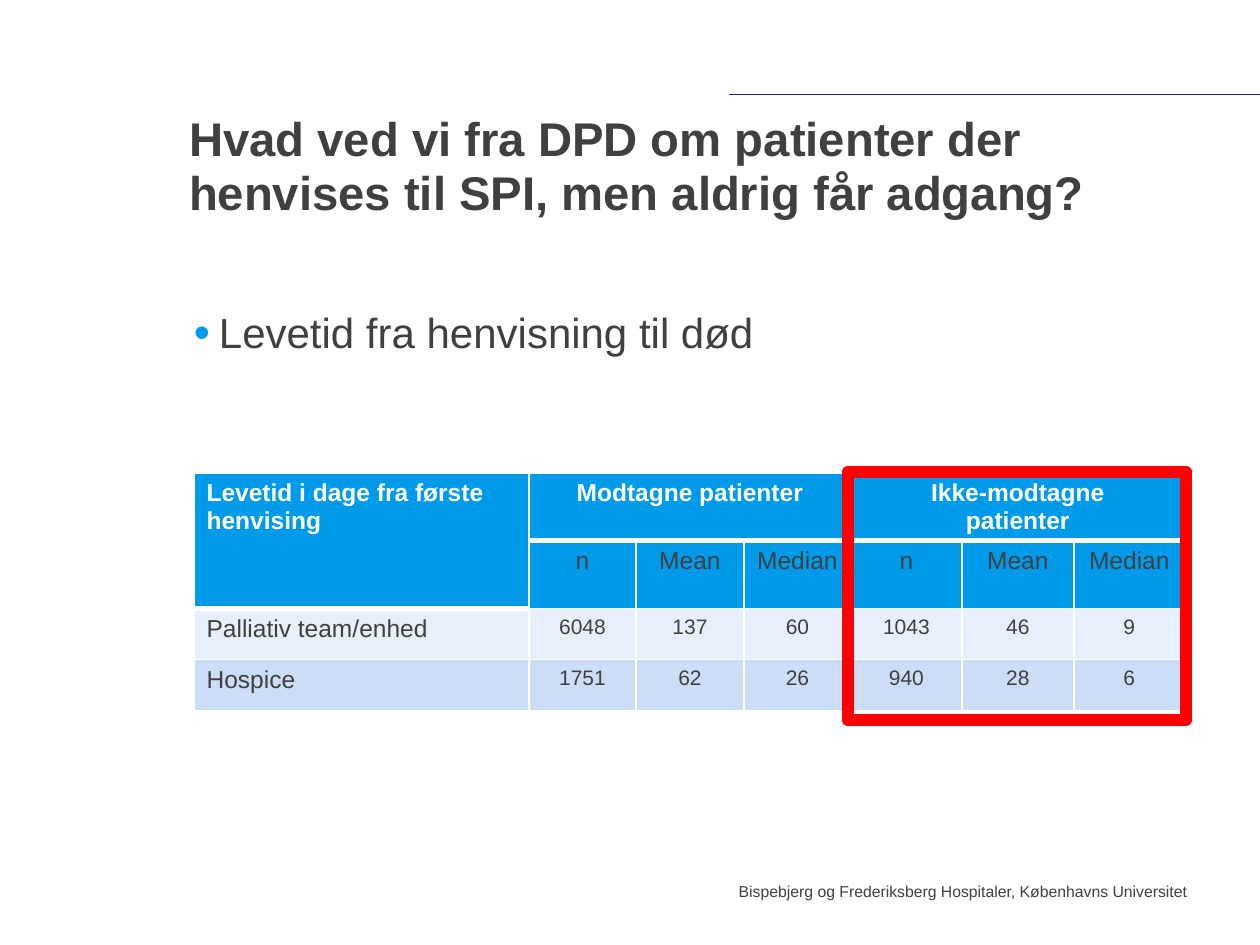
from dataclasses import dataclass
from itertools import product

from lxml.etree import SubElement
from pptx import Presentation
from pptx.dml.color import RGBColor
from pptx.enum.shapes import MSO_CONNECTOR, MSO_SHAPE
from pptx.enum.text import MSO_ANCHOR, MSO_AUTO_SIZE, PP_ALIGN
from pptx.oxml import parse_xml
from pptx.oxml.ns import nsdecls, qn
from pptx.util import Emu, Pt


@dataclass(frozen=True)
class Theme:
    font: str = "Arial"
    ink: str = "404040"
    white: str = "FFFFFF"
    blue: str = "009AEB"
    pale: str = "E7EFFB"
    mid: str = "CCDEF7"
    red: str = "FF0000"
    rule: str = "2A216A"
    title: int = 27
    body: int = 24
    label: int = 14
    value: int = 12
    note: int = 9


@dataclass(frozen=True)
class Box:
    left: int
    top: int
    width: int
    height: int

    def emu(self) -> list[Emu]:
        return [px(n) for n in (self.left, self.top, self.width, self.height)]


@dataclass(frozen=True)
class Style:
    size: int
    color: str = "404040"
    bold: bool = False
    align: PP_ALIGN = PP_ALIGN.LEFT


THEME = Theme()
COLS = [335, 107, 108, 107, 111, 112, 111]
ROWS = [66, 68, 51, 51]
STATS = ["n", "Mean", "Median"]
CELLS = [
    ["Levetid i dage fra første henvising", "Modtagne patienter", "", "",
     "Ikke-modtagne\npatienter", "", ""],
    ["", *STATS, *STATS],
    ["Palliativ team/enhed", "6048", "137", "60", "1043", "46", "9"],
    ["Hospice", "1751", "62", "26", "940", "28", "6"],
]
FILLS = [THEME.blue, THEME.blue, THEME.pale, THEME.mid]
SPANS = [((0, 0), (1, 0)), ((0, 1), (0, 3)), ((0, 4), (0, 6))]


def px(count: int) -> Emu:
    return Emu(round(count * 914400 / 126))


def write(frame, text: str, style: Style) -> None:
    frame.text = text
    for para in frame.paragraphs:
        para.alignment = style.align
        for run in para.runs:
            font = run.font
            font.name, font.size, font.bold = THEME.font, Pt(style.size), style.bold
            font.color.rgb = RGBColor.from_string(style.color)


def strip(frame) -> None:
    """Wrap the text and take away the margins."""
    frame.word_wrap = True
    frame.auto_size = MSO_AUTO_SIZE.NONE
    frame.margin_left = frame.margin_right = frame.margin_top = frame.margin_bottom = 0


def add_text(slide, box: Box, text: str, style: Style):
    frame = slide.shapes.add_textbox(*box.emu()).text_frame
    strip(frame)
    write(frame, text, style)
    return frame


def add_bullet(para) -> None:
    props = para._p.get_or_add_pPr()
    props.set("marL", str(px(25)))
    props.set("indent", str(-px(25)))
    color = SubElement(props, qn("a:buClr"))
    SubElement(color, qn("a:srgbClr"), val=THEME.blue)
    SubElement(props, qn("a:buSzPct"), val="110000")
    SubElement(props, qn("a:buFont"), typeface=THEME.font)
    SubElement(props, qn("a:buChar"), char="•")


def set_title(slide) -> None:
    title = slide.shapes.title
    title.left, title.top, title.width, title.height = Box(189, 116, 998, 105).emu()
    frame = title.text_frame
    strip(frame)
    frame.vertical_anchor = MSO_ANCHOR.BOTTOM
    write(frame, "Hvad ved vi fra DPD om patienter der henvises til SPI, "
                 "men aldrig får adgang?", Style(THEME.title, bold=True))
    frame.paragraphs[0].line_spacing = 0.94


def add_rule(slide) -> None:
    rule = slide.shapes.add_connector(
        MSO_CONNECTOR.STRAIGHT, px(1260), px(94), px(729), px(94))
    rule.line.color.rgb = RGBColor.from_string(THEME.rule)
    rule.line.width = Pt(0.5)
    SubElement(rule._element.spPr, qn("a:effectLst"))


def set_edges(cell, top: int, bottom: int) -> None:
    """Draw white edges, with top and bottom widths in points."""
    props = cell._tc.get_or_add_tcPr()
    widths = {"lnL": 1, "lnR": 1, "lnT": top, "lnB": bottom}
    for place, (tag, width) in enumerate(widths.items()):
        props.insert(place, parse_xml(
            f'<a:{tag} {nsdecls("a")} w="{Pt(width)}"><a:solidFill>'
            f'<a:srgbClr val="{THEME.white}"/></a:solidFill></a:{tag}>'))


def cell_style(row: int, col: int) -> Style:
    size = THEME.value if row > 1 and col else THEME.label
    align = PP_ALIGN.CENTER if col else PP_ALIGN.LEFT
    head = row == 0
    return Style(size, THEME.white if head else THEME.ink, head, align)


def add_grid(slide) -> None:
    box = Box(194, 473, sum(COLS), sum(ROWS))
    table = slide.shapes.add_table(len(ROWS), len(COLS), *box.emu()).table
    for col, width in zip(table.columns, COLS):
        col.width = px(width)
    for row, height in zip(table.rows, ROWS):
        row.height = px(height)
    for first, last in SPANS:
        table.cell(*first).merge(table.cell(*last))
    for row, col in product(range(len(ROWS)), range(len(COLS))):
        cell = table.cell(row, col)
        cell.fill.solid()
        cell.fill.fore_color.rgb = RGBColor.from_string(FILLS[row])
        split = 1 if col else 2
        set_edges(cell, 3 if row == split else 1, 3 if row < split else 1)
        if CELLS[row][col]:
            write(cell.text_frame, CELLS[row][col], cell_style(row, col))


def add_frame(slide) -> None:
    frame = slide.shapes.add_shape(MSO_SHAPE.RECTANGLE, *Box(848, 472, 338, 248).emu())
    frame.shadow.inherit = False
    frame.fill.background()
    frame.line.color.rgb = RGBColor.from_string(THEME.red)
    frame.line.width = Pt(7.25)
    SubElement(frame.line._get_or_add_ln(), qn("a:round"))


def main() -> None:
    deck = Presentation()
    deck.slide_width, deck.slide_height = px(1260), px(945)
    slide = deck.slides.add_slide(deck.slide_layouts[5])
    add_rule(slide)
    set_title(slide)
    body = add_text(slide, Box(194, 307, 998, 60),
                    "Levetid fra henvisning til død", Style(THEME.body))
    add_bullet(body.paragraphs[0])
    add_text(slide, Box(650, 882, 537, 63),
             "Bispebjerg og Frederiksberg Hospitaler, Københavns Universitet",
             Style(THEME.note, align=PP_ALIGN.RIGHT))
    add_grid(slide)
    add_frame(slide)
    deck.save("out.pptx")


if __name__ == "__main__":
    main()
